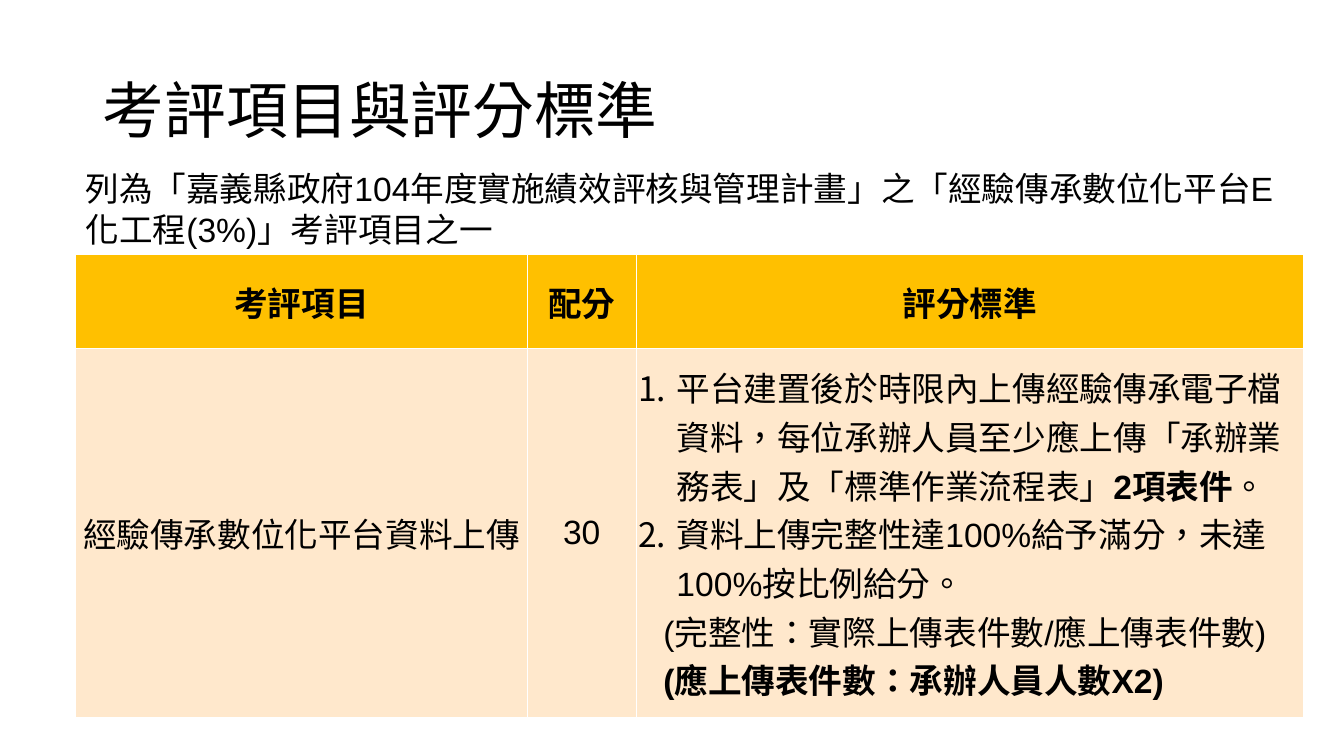
from dataclasses import dataclass

import lxml.etree
import pptx
import pptx.dml.color
import pptx.enum.lang
import pptx.enum.text
import pptx.oxml.ns
import pptx.util

Inches = pptx.util.Inches
Pt = pptx.util.Pt
Align = pptx.enum.text.PP_ALIGN
Anchor = pptx.enum.text.MSO_ANCHOR


@dataclass(frozen=True)
class Theme:
    font: str = "Arial"
    title_size: float = 44
    body_size: float = 24
    intro_leading: float = 29.3
    criteria_leading: float = 34.8
    text: str = "000000"
    background: str = "FFFFFF"
    header_fill: str = "FFC000"
    body_fill: str = "FFE8CC"


@dataclass(frozen=True)
class Span:
    text: str
    bold: bool = False


@dataclass(frozen=True)
class Criterion:
    spans: tuple[Span, ...]
    numbered: bool = False


THEME = Theme()
TITLE = "考評項目與評分標準"
INTRO = "列為「嘉義縣政府104年度實施績效評核與管理計畫」之「經驗傳承數位化平台E化工程(3%)」考評項目之一"
HEADERS = ("考評項目", "配分", "評分標準")
ITEM = ("經驗傳承數位化平台資料上傳", "30")
CRITERIA = (
    Criterion((
        Span("平台建置後於時限內上傳經驗傳承電子檔資料，每位承辦人員至少應上傳「承辦業務表」及「標準作業流程表」"),
        Span("2項表件", bold=True),
        Span("。"),
    ), numbered=True),
    Criterion((Span("資料上傳完整性達100%給予滿分，未達100%按比例給分。"),), numbered=True),
    Criterion((Span("(完整性：實際上傳表件數/應上傳表件數)"),)),
    Criterion((Span("(應上傳表件數：承辦人員人數X2)", bold=True),)),
)
COLUMN_WIDTHS = (4.48, 1.08, 6.62)
ROW_HEIGHTS = (0.94, 3.66)


def rgb(value: str) -> pptx.dml.color.RGBColor:
    return pptx.dml.color.RGBColor.from_string(value)


def style_run(run, size: float, bold: bool = False) -> None:
    font = run.font
    font.name = THEME.font
    font.size = Pt(size)
    font.bold = bold
    font.color.rgb = rgb(THEME.text)
    font.language_id = pptx.enum.lang.MSO_LANGUAGE_ID.TRADITIONAL_CHINESE


def write_line(paragraph, text: str, size: float, align: Align, bold: bool = False) -> None:
    paragraph.text = text
    paragraph.alignment = align
    for run in paragraph.runs:
        style_run(run, size, bold)


def write_criterion(paragraph, criterion: Criterion) -> None:
    paragraph.alignment = Align.LEFT
    paragraph.line_spacing = Pt(THEME.criteria_leading)
    for span in criterion.spans:
        run = paragraph.add_run()
        run.text = span.text
        style_run(run, THEME.body_size, span.bold)
    properties = paragraph._p.get_or_add_pPr()
    properties.set("marL", str(Inches(0.38 if criterion.numbered else 0.25)))
    if criterion.numbered:
        properties.set("indent", str(-Inches(0.38)))
        lxml.etree.SubElement(
            properties, pptx.oxml.ns.qn("a:buAutoNum"), type="arabicPeriod")


def prepare_cell(cell, fill: str) -> None:
    cell.fill.solid()
    cell.fill.fore_color.rgb = rgb(fill)
    cell.vertical_anchor = Anchor.MIDDLE
    cell.margin_left = cell.margin_right = Inches(0.02)
    cell.margin_top = cell.margin_bottom = 0


def add_title(slide) -> None:
    title = slide.shapes.title
    title.left, title.top = Inches(0.92), Inches(0.4)
    title.width, title.height = Inches(11.5), Inches(1.45)
    title.text_frame.vertical_anchor = Anchor.MIDDLE
    heading = title.text_frame.paragraphs[0]
    write_line(heading, TITLE, THEME.title_size, Align.LEFT)
    heading.line_spacing = 0.9


def add_scoring_table(slide) -> None:
    table = slide.shapes.add_table(
        len(ROW_HEIGHTS), len(COLUMN_WIDTHS), Inches(0.75), Inches(2.52),
        Inches(sum(COLUMN_WIDTHS)), Inches(sum(ROW_HEIGHTS))).table
    for column, width in zip(table.columns, COLUMN_WIDTHS):
        column.width = Inches(width)
    for row, height, fill in zip(
            table.rows, ROW_HEIGHTS, (THEME.header_fill, THEME.body_fill)):
        row.height = Inches(height)
        for cell in row.cells:
            prepare_cell(cell, fill)
    for row_index, labels in enumerate((HEADERS, ITEM)):
        for column_index, label in enumerate(labels):
            paragraph = table.cell(row_index, column_index).text_frame.paragraphs[0]
            write_line(paragraph, label, THEME.body_size, Align.CENTER, bold=row_index == 0)
    criteria_frame = table.cell(1, 2).text_frame
    for index, criterion in enumerate(CRITERIA):
        paragraph = criteria_frame.add_paragraph() if index else criteria_frame.paragraphs[0]
        write_criterion(paragraph, criterion)


def add_intro(slide) -> None:
    intro = slide.shapes.add_textbox(
        Inches(0.75), Inches(1.61), Inches(12.29), Inches(0.91))
    frame = intro.text_frame
    frame.word_wrap = True
    frame.auto_size = pptx.enum.text.MSO_AUTO_SIZE.SHAPE_TO_FIT_TEXT
    paragraph = frame.paragraphs[0]
    write_line(paragraph, INTRO, THEME.body_size, Align.LEFT)
    paragraph.line_spacing = Pt(THEME.intro_leading)


def main() -> None:
    presentation = pptx.Presentation()
    presentation.slide_width = Inches(13.33)
    presentation.slide_height = Inches(7.5)
    slide = presentation.slides.add_slide(presentation.slide_layouts[5])
    slide.background.fill.solid()
    slide.background.fill.fore_color.rgb = rgb(THEME.background)
    add_title(slide)
    add_scoring_table(slide)
    add_intro(slide)
    presentation.save("out.pptx")


if __name__ == "__main__":
    main()
